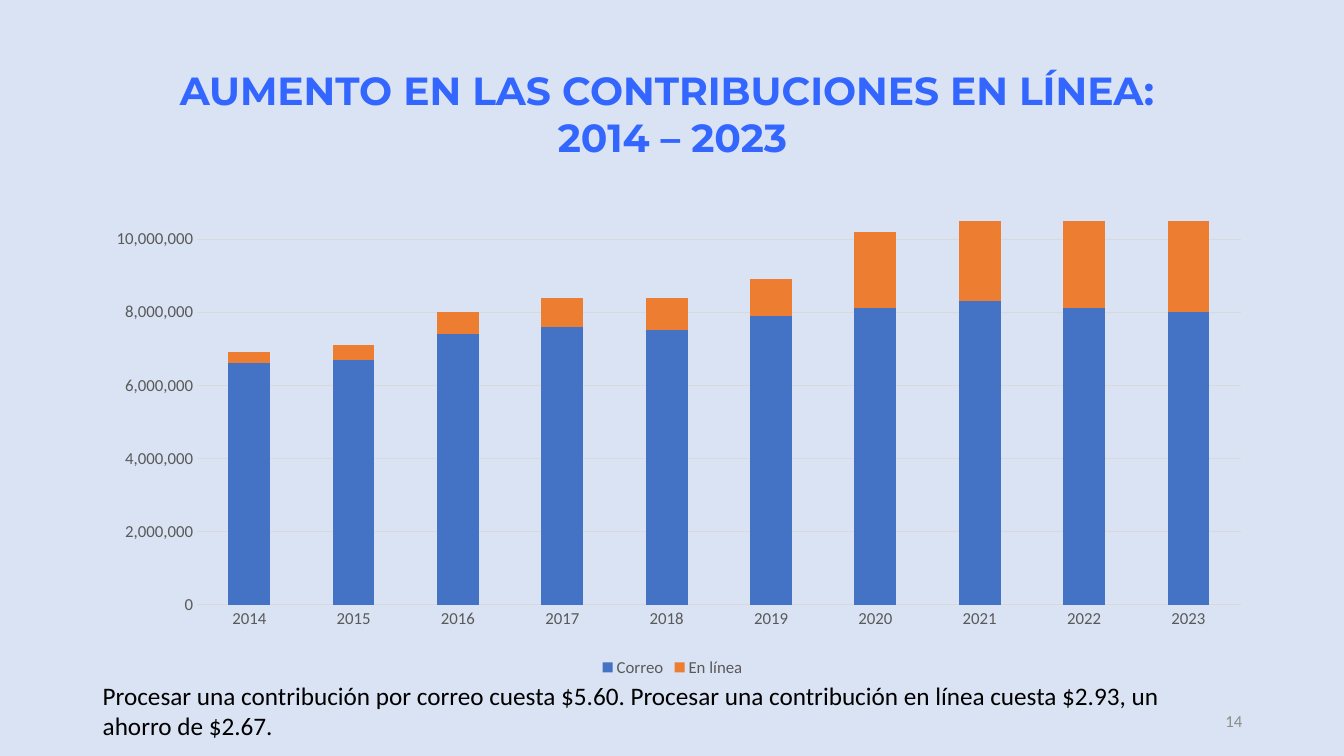
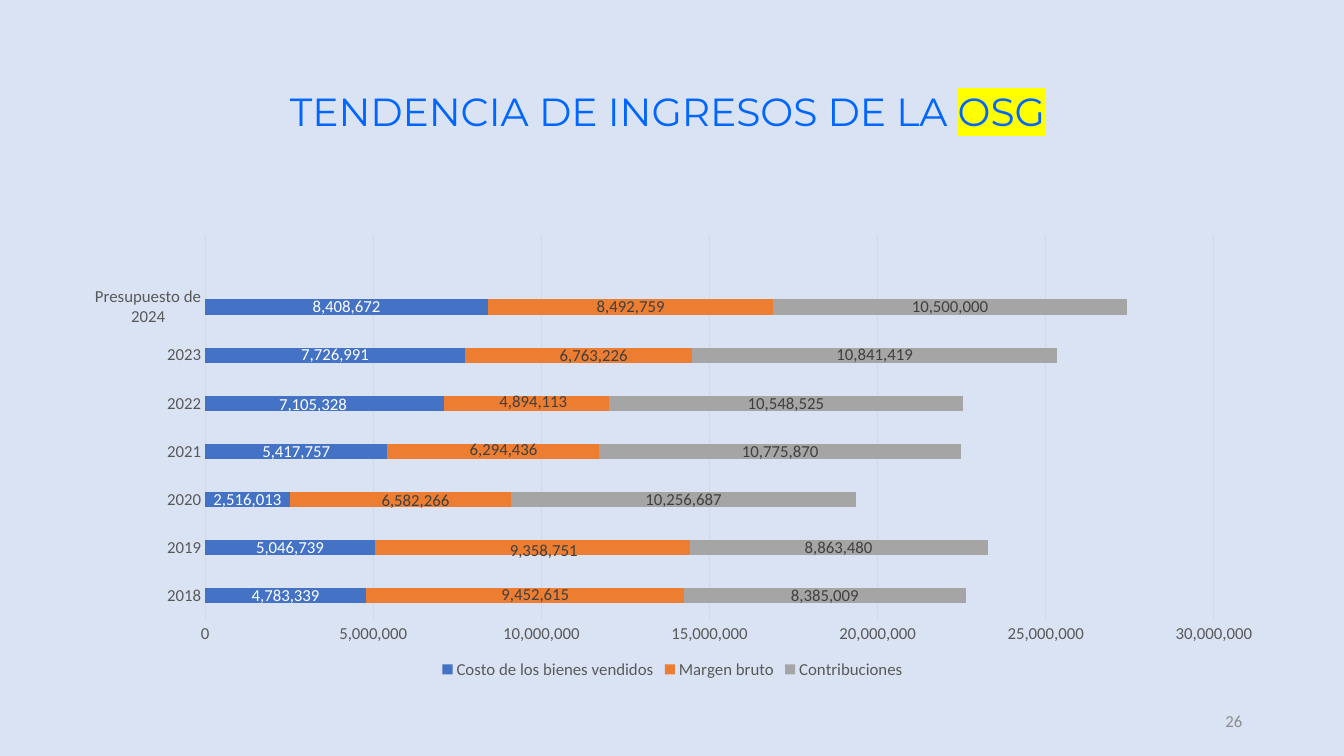
from dataclasses import dataclass

from lxml import etree
from pptx import Presentation
from pptx.chart.data import CategoryChartData
from pptx.dml.color import RGBColor
from pptx.enum.chart import XL_CHART_TYPE, XL_LEGEND_POSITION, XL_TICK_MARK
from pptx.enum.text import MSO_ANCHOR, MSO_AUTO_SIZE, PP_ALIGN
from pptx.oxml.ns import qn
from pptx.util import Inches, Pt

COLUMNS = XL_CHART_TYPE.COLUMN_STACKED
BARS = XL_CHART_TYPE.BAR_STACKED
BOTTOM = XL_LEGEND_POSITION.BOTTOM
NO_TICK = XL_TICK_MARK.NONE
MIDDLE = MSO_ANCHOR.MIDDLE
TOP = MSO_ANCHOR.TOP
LEFT, CENTER, RIGHT = PP_ALIGN.LEFT, PP_ALIGN.CENTER, PP_ALIGN.RIGHT


@dataclass(frozen=True)
class Theme:
    background: str = "DAE3F3"
    blue: str = "4472C4"
    orange: str = "ED7D31"
    gray: str = "A5A5A5"
    grid: str = "D9D9D9"
    axis_text: str = "595959"
    dark_label: str = "404040"
    light_label: str = "FFFFFF"
    page_number: str = "8C8C8C"
    note: str = "000000"
    highlight: str = "FFFF00"
    title_font: str = "Montserrat"
    body_font: str = "Calibri"
    title_size: int = 28
    note_size: int = 18
    small_size: int = 12


THEME = Theme()
NUMBER_FORMAT = "#,##0"
MARGIN, CONTENT_WIDTH = 0.92, 11.5

# Title runs are (text, highlighted); nudges are point index: (x, y) shares of the chart.
SLIDES = [
    {
        "title": [("AUMENTO EN LAS CONTRIBUCIONES EN LÍNEA: \v2014 – 2023", False)],
        "title_style": {"color": "3366FF", "bold": True, "spacing": 1.0},
        "number": "14",
        "note": "Procesar una contribución por correo cuesta $5.60. "
                "Procesar una contribución en línea cuesta $2.93, un ahorro de $2.67.",
        "chart": {
            "kind": COLUMNS, "top": 2.0, "gap": 150, "maximum": 10500000, "step": 2000000,
            "plot": (0.09, 0.04, 0.9, 0.8),
            "categories": [str(year) for year in range(2014, 2024)],
            "series": [
                {"name": "Correo", "color": THEME.blue,
                 "values": [6600000, 6700000, 7400000, 7600000, 7500000,
                            7900000, 8100000, 8300000, 8100000, 8000000]},
                {"name": "En línea", "color": THEME.orange,
                 "values": [300000, 400000, 600000, 800000, 900000,
                            1000000, 2100000, 2500000, 2400000, 2800000]},
            ],
        },
    },
    {
        "title": [("TENDENCIA DE INGRESOS DE LA ", False), ("OSG", True), (" ", False)],
        "title_style": {"color": "0066FF", "bold": False, "spacing": 0.9},
        "number": "26",
        "note": None,
        "chart": {
            "kind": BARS, "top": 2.02, "gap": 219, "maximum": 30000000, "step": 5000000,
            "plot": (0.097, 0.065, 0.87, 0.803),
            "categories": [str(year) for year in range(2018, 2024)]
            + ["Presupuesto de 2024", ""],
            "series": [
                {"name": "Costo de los bienes vendidos", "color": THEME.blue,
                 "label": THEME.light_label, "nudges": {4: (-0.01, 0.004)},
                 "values": [4783339, 5046739, 2516013, 5417757,
                            7105328, 7726991, 8408672, None]},
                {"name": "Margen bruto", "color": THEME.orange,
                 "label": THEME.dark_label,
                 "nudges": {0: (0.009, -0.002), 1: (0.01, 0.006), 2: (0.013, 0.002),
                            3: (0.009, -0.004), 4: (0.006, -0.004), 5: (0.013, 0.002)},
                 "values": [9452615, 9358751, 6582266, 6294436,
                            4894113, 6763226, 8492759, None]},
                {"name": "Contribuciones", "color": THEME.gray,
                 "label": THEME.dark_label,
                 "values": [8385009, 8863480, 10256687, 10775870,
                            10548525, 10841419, 10500000, None]},
            ],
        },
    },
]


def rgb(color):
    return RGBColor.from_string(color)


def style_font(font, color, size=THEME.small_size, name=THEME.body_font, bold=False):
    font.name, font.size, font.bold = name, Pt(size), bold
    font.color.rgb = rgb(color)


def highlight(span):
    mark = etree.Element(qn("a:highlight"))
    etree.SubElement(mark, qn("a:srgbClr"), val=THEME.highlight)
    span.font._element.find(qn("a:solidFill")).addnext(mark)


def set_title(page, runs, style):
    title = page.shapes.title
    title.left, title.top = Inches(MARGIN), Inches(0.4)
    title.width, title.height = Inches(CONTENT_WIDTH), Inches(1.45)
    frame = title.text_frame
    frame.text = runs[0][0]
    frame.auto_size, frame.vertical_anchor = MSO_AUTO_SIZE.NONE, MIDDLE
    para = frame.paragraphs[0]
    para.alignment, para.line_spacing = CENTER, style["spacing"]
    for text, _ in runs[1:]:
        para.add_run().text = text
    for span in para.runs:
        style_font(span.font, style["color"], THEME.title_size,
                   THEME.title_font, style["bold"])
    for span, (_, marked) in zip(para.runs, runs):
        if marked:
            highlight(span)


def add_text(page, text, place, color, size, align=LEFT, anchor=TOP):
    box = page.shapes.add_textbox(*map(Inches, place))
    frame = box.text_frame
    frame.word_wrap, frame.vertical_anchor = True, anchor
    frame.text = text
    para = frame.paragraphs[0]
    para.alignment = align
    style_font(para.runs[0].font, color, size)


def manual_layout(**settings):
    layout = etree.Element(qn("c:layout"))
    manual = etree.SubElement(layout, qn("c:manualLayout"))
    for name, value in settings.items():
        etree.SubElement(manual, qn("c:" + name), val=str(value))
    return layout


def place_plot(chart, x, y, w, h):
    area = chart._chartSpace.find(".//" + qn("c:plotArea"))
    for old in area.findall(qn("c:layout")):
        area.remove(old)
    area.insert(0, manual_layout(layoutTarget="inner", xMode="edge", yMode="edge",
                                 x=x, y=y, w=w, h=h))


def style_axes(chart, maximum, step):
    for axis in (chart.category_axis, chart.value_axis):
        axis.major_tick_mark = axis.minor_tick_mark = NO_TICK
        style_font(axis.tick_labels.font, THEME.axis_text)
    values = chart.value_axis
    values.minimum_scale, values.maximum_scale, values.major_unit = 0, maximum, step
    values.tick_labels.number_format = NUMBER_FORMAT
    values.tick_labels.number_format_is_linked = False
    values.format.line.fill.background()
    for line in (chart.category_axis.format.line, values.major_gridlines.format.line):
        line.color.rgb = rgb(THEME.grid)
        line.width = Pt(0.75)


def label_series(series, color, nudges):
    labels = series.data_labels
    labels.show_value = True
    labels.number_format, labels.number_format_is_linked = NUMBER_FORMAT, False
    style_font(labels.font, color)
    for index, (x, y) in nudges.items():
        style_font(series.points[index].data_label.font, color)
        position = series._element.find(
            f"{qn('c:dLbls')}/{qn('c:dLbl')}/{qn('c:idx')}[@val='{index}']")
        position.addnext(manual_layout(x=x, y=y))


def add_stacked_chart(page, content):
    data = CategoryChartData(number_format=NUMBER_FORMAT)
    data.categories = content["categories"]
    for entry in content["series"]:
        data.add_series(entry["name"], entry["values"])
    chart = page.shapes.add_chart(
        content["kind"], Inches(MARGIN), Inches(content["top"]),
        Inches(CONTENT_WIDTH), Inches(4.76), data).chart
    chart.has_title = False
    style_font(chart.font, THEME.axis_text)
    chart.has_legend = True
    chart.legend.position, chart.legend.include_in_layout = BOTTOM, False
    style_font(chart.legend.font, THEME.axis_text)
    style_axes(chart, content["maximum"], content["step"])
    place_plot(chart, *content["plot"])
    plot = chart.plots[0]
    plot.gap_width, plot.overlap, plot.vary_by_categories = content["gap"], 100, False
    for series, entry in zip(plot.series, content["series"]):
        series.format.fill.solid()
        series.format.fill.fore_color.rgb = rgb(entry["color"])
        if "label" in entry:
            label_series(series, entry["label"], entry.get("nudges", {}))


def main():
    deck = Presentation()
    deck.slide_width, deck.slide_height = Inches(13.33), Inches(7.5)
    backdrop = deck.slide_master.background.fill
    backdrop.solid()
    backdrop.fore_color.rgb = rgb(THEME.background)
    title_only = deck.slide_layouts.get_by_name("Title Only")
    for content in SLIDES:
        page = deck.slides.add_slide(title_only)
        set_title(page, content["title"], content["title_style"])
        add_stacked_chart(page, content["chart"])
        add_text(page, content["number"], (9.42, 6.95, 3, 0.4),
                 THEME.page_number, THEME.small_size, RIGHT, MIDDLE)
        if content["note"]:
            add_text(page, content["note"], (MARGIN, 6.7, 10.92, 0.4),
                     THEME.note, THEME.note_size)
    deck.save("out.pptx")


if __name__ == "__main__":
    main()
